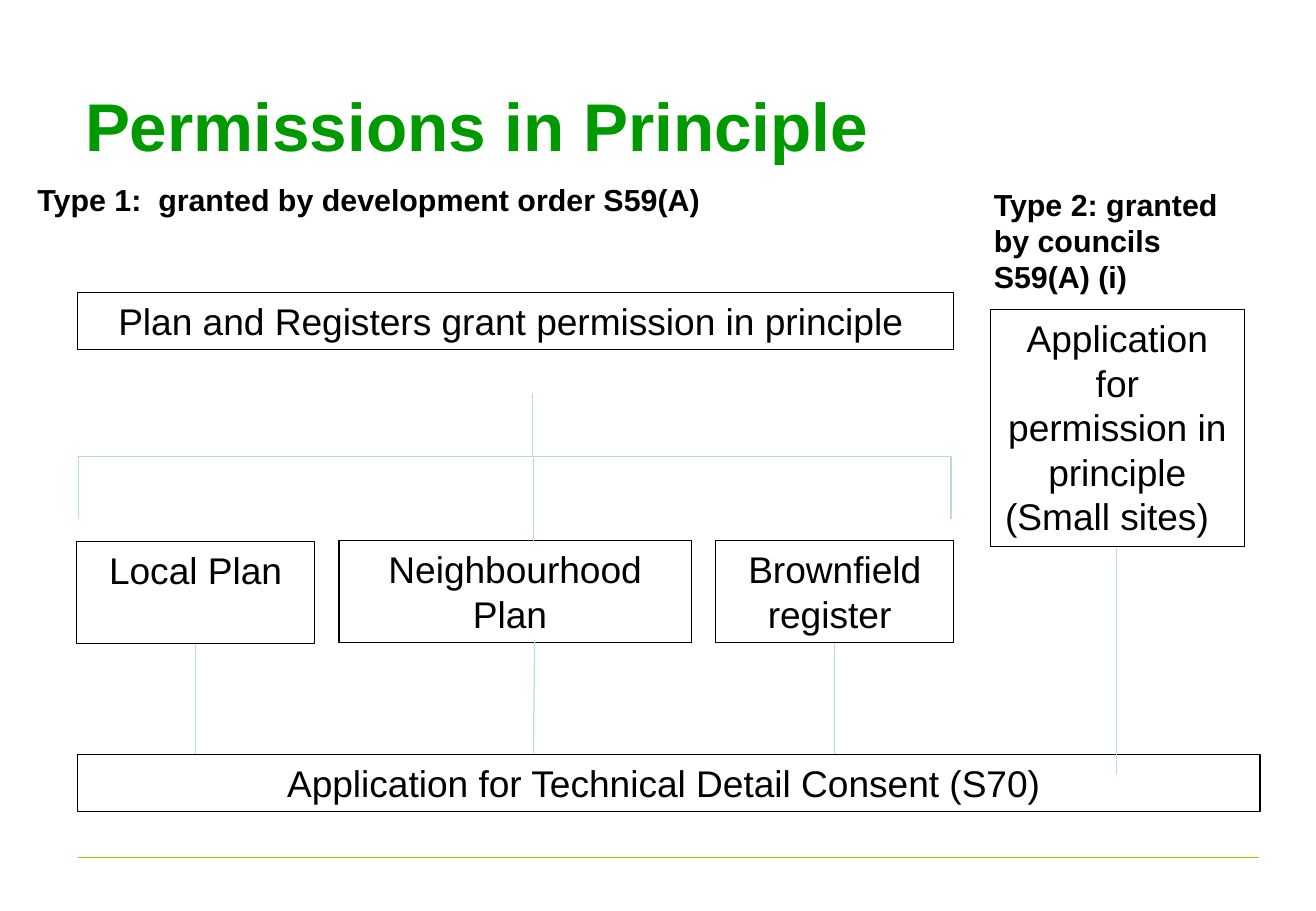
import pptx
import pptx.util
import pptx.dml.color
import pptx.enum.shapes
import pptx.enum.text
import pptx.oxml.ns
import lxml.etree

Inches = pptx.util.Inches
SHAPE = pptx.enum.shapes.MSO_SHAPE
ALIGN = pptx.enum.text.PP_ALIGN


def paint(code):
    return pptx.dml.color.RGBColor.from_string(code)


class Deck:
    """Hold the style and current slide, and add each kind of element."""

    font = "Arial"
    ink = "000000"
    green = "009900"
    lime = "99CC00"
    pale = "B6DCDF"

    def __init__(self, wide, high):
        self.file = pptx.Presentation()
        self.file.slide_width = Inches(wide)
        self.file.slide_height = Inches(high)
        self.slide = self.file.slides.add_slide(self.file.slide_layouts[6])

    def letter(self, shape, text, size, color, bold, align):
        frame = shape.text_frame
        frame.word_wrap = True
        frame.vertical_anchor = pptx.enum.text.MSO_ANCHOR.TOP
        frame.text = text
        for para in frame.paragraphs:
            para.alignment = align
            for run in para.runs:
                run.font.name = self.font
                run.font.size = pptx.util.Pt(size)
                run.font.bold = bold
                run.font.color.rgb = paint(color)
        return frame

    def label(self, text, place, size=18, color=ink):
        shape = self.slide.shapes.add_textbox(*map(Inches, place))
        return self.letter(shape, text, size, color, True, ALIGN.LEFT)

    def shape(self, kind, place, color):
        shape = self.slide.shapes.add_shape(kind, *map(Inches, place))
        shape.shadow.inherit = False
        shape.fill.background()
        shape.line.color.rgb = paint(color)
        shape.line.width = pptx.util.Pt(0.75)
        return shape

    def box(self, text, *place):
        shape = self.shape(SHAPE.RECTANGLE, place, self.ink)
        self.letter(shape, text, 22, self.ink, False, ALIGN.CENTER)

    def brace(self, point, *place):
        shape = self.shape(SHAPE.LEFT_BRACE, place, self.pale)
        shape.rotation = 90
        shape.adjustments[0] = 0
        shape.adjustments[1] = point

    def line(self, ends, color=pale):
        kind = pptx.enum.shapes.MSO_CONNECTOR.STRAIGHT
        line = self.slide.shapes.add_connector(kind, *map(Inches, ends))
        line.line.color.rgb = paint(color)
        line.line.width = pptx.util.Pt(0.75)
        props = line._element.spPr
        lxml.etree.SubElement(props, pptx.oxml.ns.qn("a:effectLst"))


def main():
    deck = Deck(10.83, 7.5)
    deck.line((0.64, 7.06, 10.36, 7.06), deck.lime)
    title = deck.label("Permissions in Principle", (0.63, 0.64, 9.34, 1.03), 40, deck.green)
    title.margin_left = Inches(0.07)

    deck.box("Plan and Registers grant permission in principle ", 0.64, 2.41, 7.21, 0.47)
    deck.box("Application for permission in principle\n(Small sites)  ", 8.15, 2.55, 2.09, 1.95)
    routes = [
        ("Local Plan", 0.63, 4.46, 1.96),
        ("Neighbourhood Plan ", 2.79, 4.45, 2.9),
        ("Brownfield register ", 5.89, 4.45, 1.96),
    ]
    for text, left, top, width in routes:
        deck.box(text, left, top, width, 0.84)
    deck.brace(0.48, 3.72, 0.17, 1.03, 7.18)
    deck.box("Application for Technical Detail Consent (S70) ", 0.64, 6.21, 9.73, 0.47)

    links = [
        (1.61, 5.3, 1.61, 6.21),
        (4.4, 5.27, 4.39, 6.2),
        (6.87, 5.29, 6.87, 6.21),
        (9.19, 4.51, 9.19, 6.37),
        (4.39, 3.77, 4.39, 4.46),
    ]
    for ends in links:
        deck.line(ends)

    deck.label("Type 1:  granted by development order S59(A)", (0.21, 1.44, 6.34, 0.4))
    deck.label("Type 2: granted by councils S59(A) (i)", (8.08, 1.48, 2.22, 1.01))
    deck.file.save("out.pptx")


if __name__ == "__main__":
    main()
